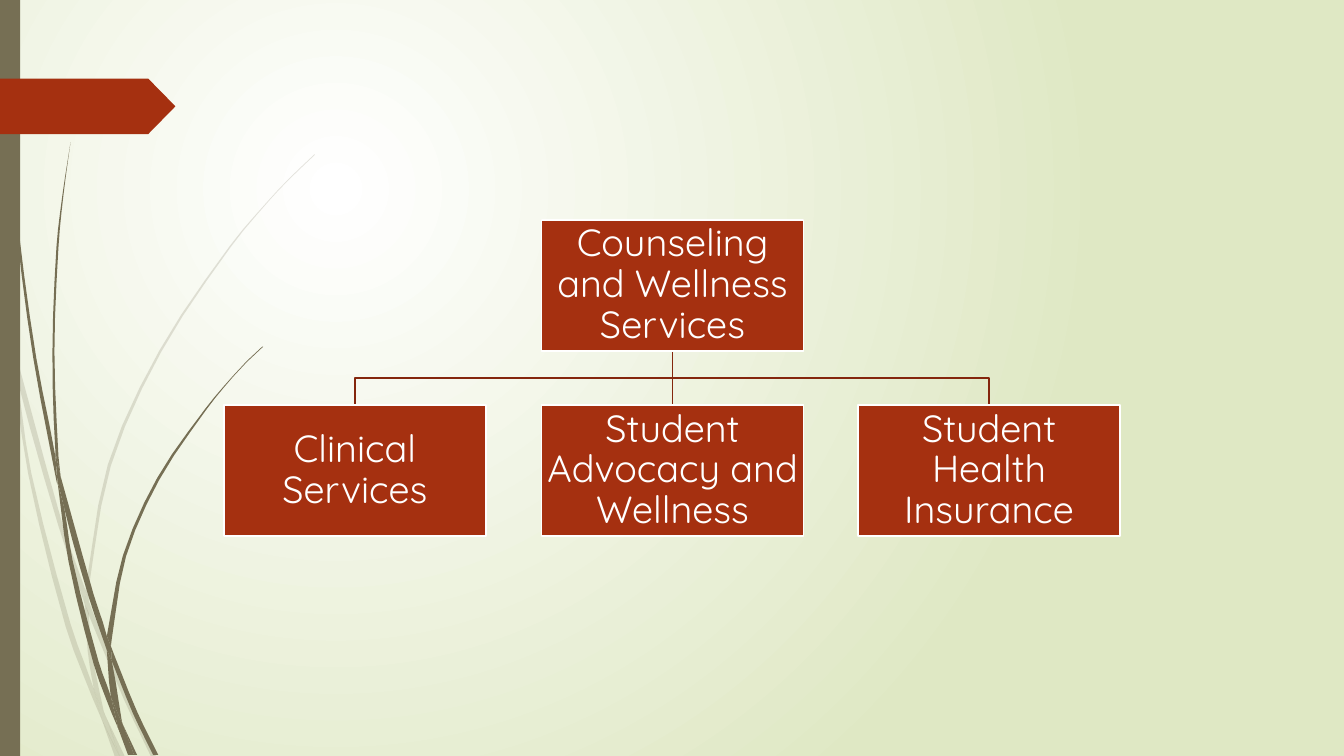
from dataclasses import dataclass

import lxml.etree
import pptx
import pptx.dml.color
import pptx.enum.shapes
import pptx.enum.text
import pptx.oxml.ns
import pptx.util

RGBColor = pptx.dml.color.RGBColor
MSO_SHAPE = pptx.enum.shapes.MSO_SHAPE
qn = pptx.oxml.ns.qn

EMU_PER_PX = 9144  # 100 px to the inch
SLIDE_W, SLIDE_H = 1333, 750

WHITE = RGBColor(0xFF, 0xFF, 0xFF)
PALE_GREEN = RGBColor(0xDF, 0xE8, 0xC4)
OLIVE = RGBColor(0x76, 0x6F, 0x54)
RUST = RGBColor(0xA5, 0x30, 0x10)
DARK_RUST = RGBColor(0x84, 0x26, 0x0D)

BOX_W, BOX_H = 260, 130
BOX_LEFTS = (222, 537, 851)
TOP_Y, ROW_Y = 218, 402
BUS_Y = (TOP_Y + BOX_H + ROW_Y) // 2
LINE_WIDTH = pptx.util.Pt(1.25)
TEXT_FRAME = {
    "word_wrap": True,
    "vertical_anchor": pptx.enum.text.MSO_ANCHOR.MIDDLE,
    **{f"margin_{side}": 2 * EMU_PER_PX for side in ("left", "top", "right", "bottom")},
}
PARAGRAPH = {"alignment": pptx.enum.text.PP_ALIGN.CENTER, "line_spacing": 0.9}
FONT = {"name": "Quicksand", "size": pptx.util.Pt(27)}

Points = list[tuple[float, float]]


@dataclass
class Blade:
    """A piece of grass: two smooth edges, both running from tip to root."""
    near: Points
    far: Points


@dataclass
class Box:
    text: str
    x: int
    y: int


FAINT_GRASS = [
    Blade([(0, 282), (9, 322), (11, 350)], [(0, 299), (10, 344), (11, 350)]),
    Blade([(14, 345), (62, 520), (85, 586)], [(14, 345), (17, 376), (58, 522), (84, 599)]),
    Blade([(88, 596), (92, 607), (127, 692), (155, 751)], [(88, 610), (123, 694), (150, 751)]),
    Blade([(105, 711), (124, 751)], [(105, 711), (119, 751)]),
    Blade([(11, 350), (17, 376), (31, 469), (70, 619), (93, 683), (99, 707)],
          [(11, 350), (28, 470), (65, 621), (92, 693), (101, 714)]),
    Blade([(84, 599), (87, 646), (93, 683), (96, 692), (105, 711)],
          [(88, 608), (91, 646), (103, 706), (105, 711)]),
    Blade([(312, 153), (289, 175), (268, 197), (228, 244), (158, 348), (107, 461), (85, 584),
           (85, 586)],
          [(312, 154), (290, 175), (268, 198), (229, 245), (160, 349), (110, 462), (88, 584),
           (88, 596)]),
    Blade([(101, 714), (119, 751)], [(101, 714), (114, 751)]),
    Blade([(85, 586), (84, 599)], [(88, 596), (88, 610)]),
    Blade([(93, 683), (96, 692), (105, 711), (119, 751)],
          [(93, 683), (99, 707), (101, 714), (119, 751)]),
]
SOLID_GRASS = [
    Blade([(4, 0), (5, 48), (8, 109), (19, 232), (36, 355), (55, 453), (57, 481)],
          [(3, 0), (4, 48), (7, 110), (17, 233), (33, 355), (56, 477), (57, 481)]),
    Blade([(60, 472), (93, 590), (106, 631), (106, 645)],
          [(60, 472), (64, 505), (88, 592), (106, 645)]),
    Blade([(110, 641), (113, 649), (136, 706), (157, 749)],
          [(111, 656), (132, 708), (152, 749)]),
    Blade([(57, 477), (64, 505), (72, 556), (98, 657), (110, 691), (116, 717)],
          [(57, 477), (68, 557), (93, 659), (111, 708), (117, 722)]),
    Blade([(70, 141), (63, 193), (58, 245), (54, 349), (58, 453), (60, 472)],
          [(70, 141), (62, 193), (56, 245), (52, 349), (55, 449), (60, 472)]),
    Blade([(122, 719), (136, 749)], [(122, 719), (133, 749)]),
    Blade([(55, 449), (60, 472), (64, 505)], [(55, 453), (57, 477), (64, 505)]),
    Blade([(260, 344), (245, 358), (231, 373), (204, 405), (156, 474), (122, 551), (106, 631)],
          [(261, 344), (245, 359), (231, 374), (205, 406), (158, 476), (125, 552), (111, 633),
           (110, 641)]),
    Blade([(117, 722), (131, 749)], [(117, 722), (127, 749)]),
    Blade([(106, 645), (110, 691), (116, 706), (122, 719)],
          [(106, 645), (111, 656), (121, 716), (122, 719)]),
    Blade([(106, 631), (106, 645)], [(110, 641), (111, 656)]),
    Blade([(110, 691), (116, 706), (122, 719), (133, 749)],
          [(110, 691), (116, 717), (117, 722), (130, 749)]),
]

TOP_BOX = Box("Counseling and Wellness Services", BOX_LEFTS[1], TOP_Y)
ROW_BOXES = [
    Box(text, x, ROW_Y) for x, text in zip(BOX_LEFTS, (
        "Clinical Services", "Student Advocacy and Wellness", "Student Health Insurance"))
]


def px(n: float) -> pptx.util.Emu:
    return pptx.util.Emu(round(n * EMU_PER_PX))


def apply(target, formats: dict) -> None:
    for name, value in formats.items():
        setattr(target, name, value)


def smooth(knots: Points) -> Points:
    """Points along a curve through the knots; only long spans are divided."""
    span = [((b[0] - a[0]) ** 2 + (b[1] - a[1]) ** 2) ** 0.5 for a, b in zip(knots, knots[1:])]
    last = len(knots) - 1

    def tangent(i: int, axis: int) -> float:
        lo, hi = max(i - 1, 0), min(i + 1, last)
        return (knots[hi][axis] - knots[lo][axis]) / sum(span[lo:hi])

    def at(i: int, t: float, axis: int) -> float:
        a, b = knots[i][axis], knots[i + 1][axis]
        ta, tb = tangent(i, axis) * span[i], tangent(i + 1, axis) * span[i]
        return (a + t * ta + t * t * (3 * (b - a) - 2 * ta - tb)
                + t ** 3 * (2 * (a - b) + ta + tb))

    curve = []
    for i, length in enumerate(span):
        steps = 3 if length > 30 and last > 1 else 1
        curve += [(at(i, k / steps, 0), at(i, k / steps, 1)) for k in range(steps)]
    return curve + [knots[-1]]


def paint(sp, color: RGBColor) -> None:
    sp.shadow.inherit = False
    sp.fill.solid()
    sp.fill.fore_color.rgb = color
    sp.line.fill.background()


def stroke(sp, color: RGBColor) -> None:
    sp.line.color.rgb = color
    sp.line.width = LINE_WIDTH


def add_background(s) -> None:
    fill = s.background.fill
    fill.gradient()
    for stop, color in zip(fill.gradient_stops, (WHITE, PALE_GREEN)):
        stop.color.rgb = color
    grad = s._element.find(".//" + qn("a:gradFill"))
    radial = lxml.etree.Element(qn("a:path"), path="circle")
    lxml.etree.SubElement(radial, qn("a:fillToRect"), l="50000", t="50000", r="100000", b="100000")
    grad.replace(grad.find(qn("a:lin")), radial)


def add_outline(s, points: Points, close: bool):
    first, *rest = [(px(x), px(y)) for x, y in points]
    builder = s.shapes.build_freeform(*first)
    builder.add_line_segments(rest, close=close)
    return builder.convert_to_shape()


def add_blade(s, blade: Blade, alpha: int) -> None:
    sp = add_outline(s, smooth(blade.near) + smooth(blade.far)[::-1], close=True)
    paint(sp, OLIVE)
    if alpha < 100:
        color = sp._element.spPr.find(".//" + qn("a:srgbClr"))
        lxml.etree.SubElement(color, qn("a:alpha"), val=str(alpha * 1000))


def add_block(s, kind, x: int, y: int, w: int, h: int, color: RGBColor):
    sp = s.shapes.add_shape(kind, px(x), px(y), px(w), px(h))
    paint(sp, color)
    return sp


def add_branch(s, parent: Box, child: Box) -> None:
    x1, x2 = parent.x + BOX_W // 2, child.x + BOX_W // 2
    y1 = parent.y + BOX_H
    if x1 == x2:
        line = s.shapes.add_connector(
            pptx.enum.shapes.MSO_CONNECTOR.STRAIGHT, px(x1), px(y1), px(x2), px(child.y))
        lxml.etree.SubElement(line._element.spPr, qn("a:effectLst"))
    else:
        line = add_outline(s, [(x1, y1), (x1, BUS_Y), (x2, BUS_Y), (x2, child.y)], close=False)
        line.shadow.inherit = False
        line.fill.background()
    stroke(line, DARK_RUST)


def add_box(s, box: Box) -> None:
    sp = add_block(s, MSO_SHAPE.RECTANGLE, box.x, box.y, BOX_W, BOX_H, RUST)
    stroke(sp, WHITE)
    tf = sp.text_frame
    apply(tf, TEXT_FRAME)
    p = tf.paragraphs[0]
    apply(p, PARAGRAPH)
    r = p.add_run()
    r.text = box.text
    apply(r.font, FONT)
    r.font.color.rgb = WHITE


def main() -> None:
    prs = pptx.Presentation()
    prs.slide_width, prs.slide_height = px(SLIDE_W), px(SLIDE_H)
    s = prs.slides.add_slide(prs.slide_layouts[6])
    # Backdrop: gradient, grass, side band and page tag
    add_background(s)
    for grass, alpha in ((FAINT_GRASS, 20), (SOLID_GRASS, 100)):
        for blade in grass:
            add_blade(s, blade, alpha)
    add_block(s, MSO_SHAPE.RECTANGLE, 0, 0, 20, SLIDE_H, OLIVE)
    tag = add_block(s, MSO_SHAPE.PENTAGON, 0, 78, 174, 55, RUST)
    tag.adjustments[0] = 0.49
    # Organisation chart: branches, then boxes
    for box in reversed(ROW_BOXES):
        add_branch(s, TOP_BOX, box)
    for box in (TOP_BOX, *ROW_BOXES):
        add_box(s, box)
    prs.save("out.pptx")


if __name__ == "__main__":
    main()
